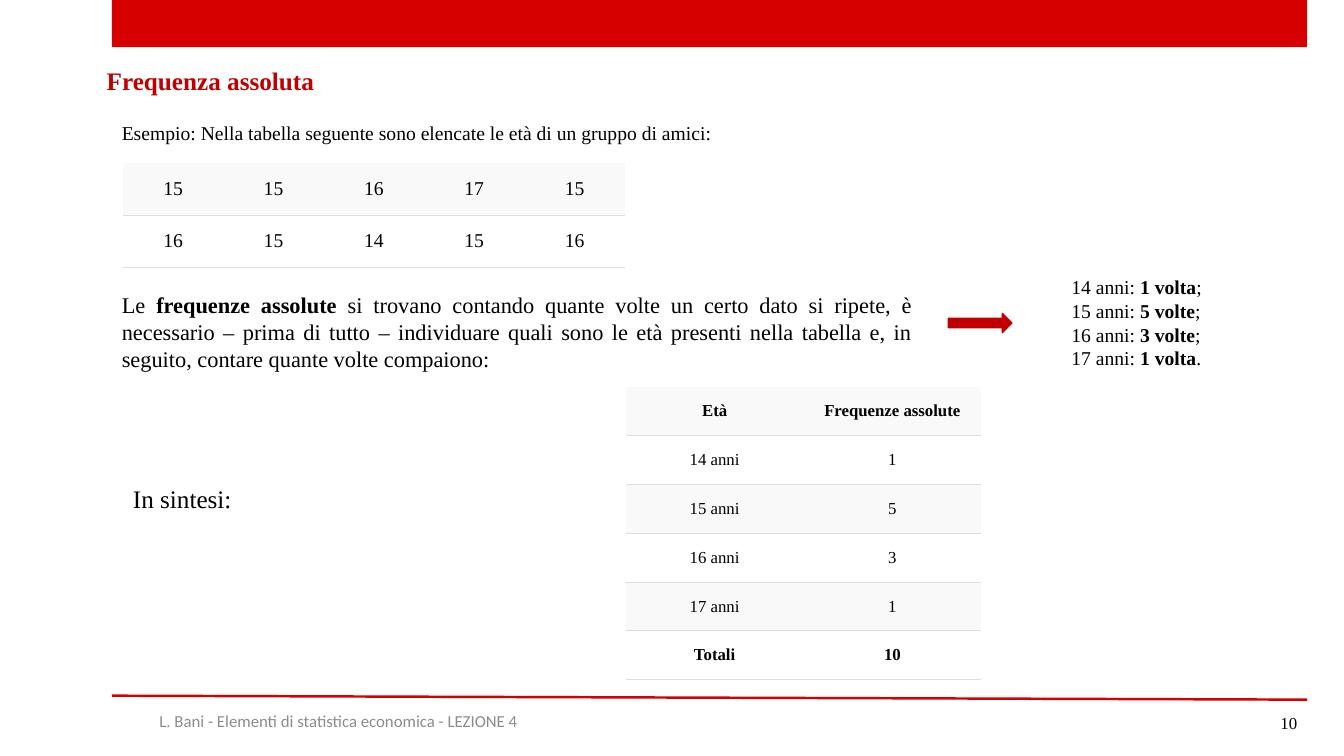
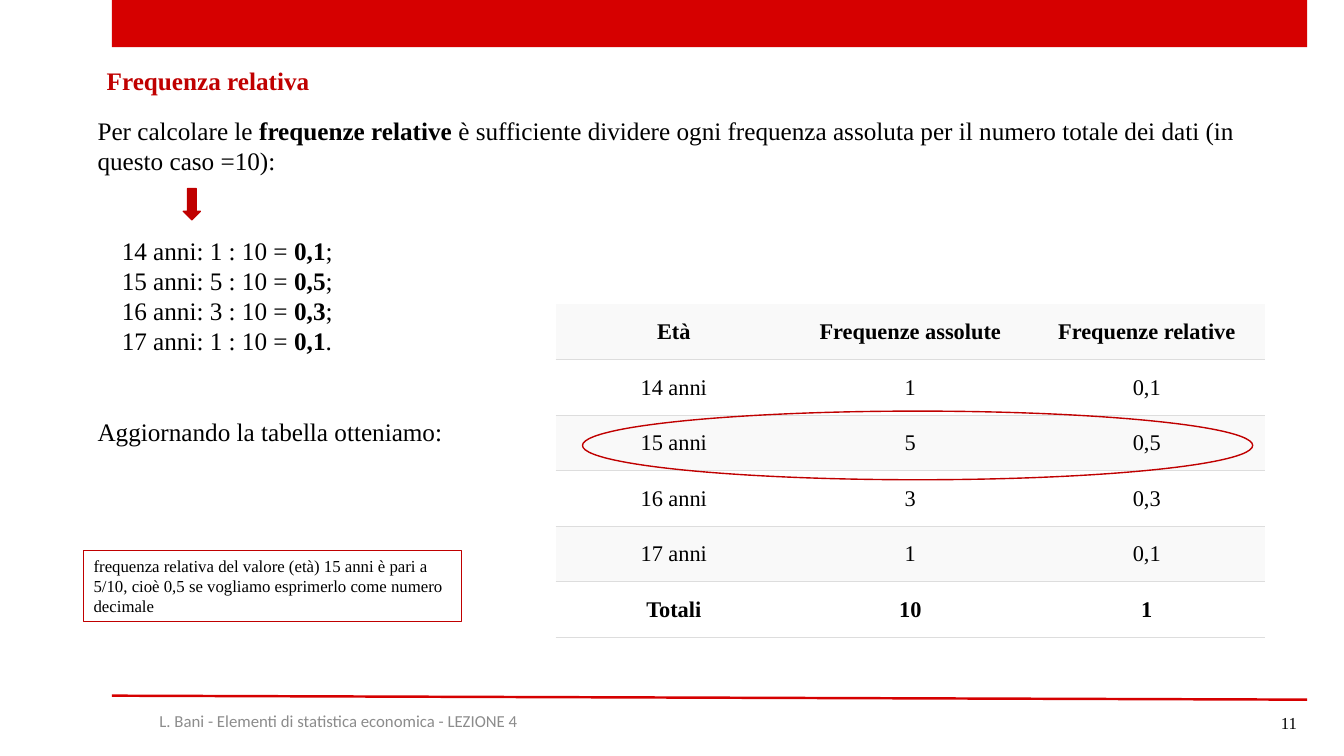
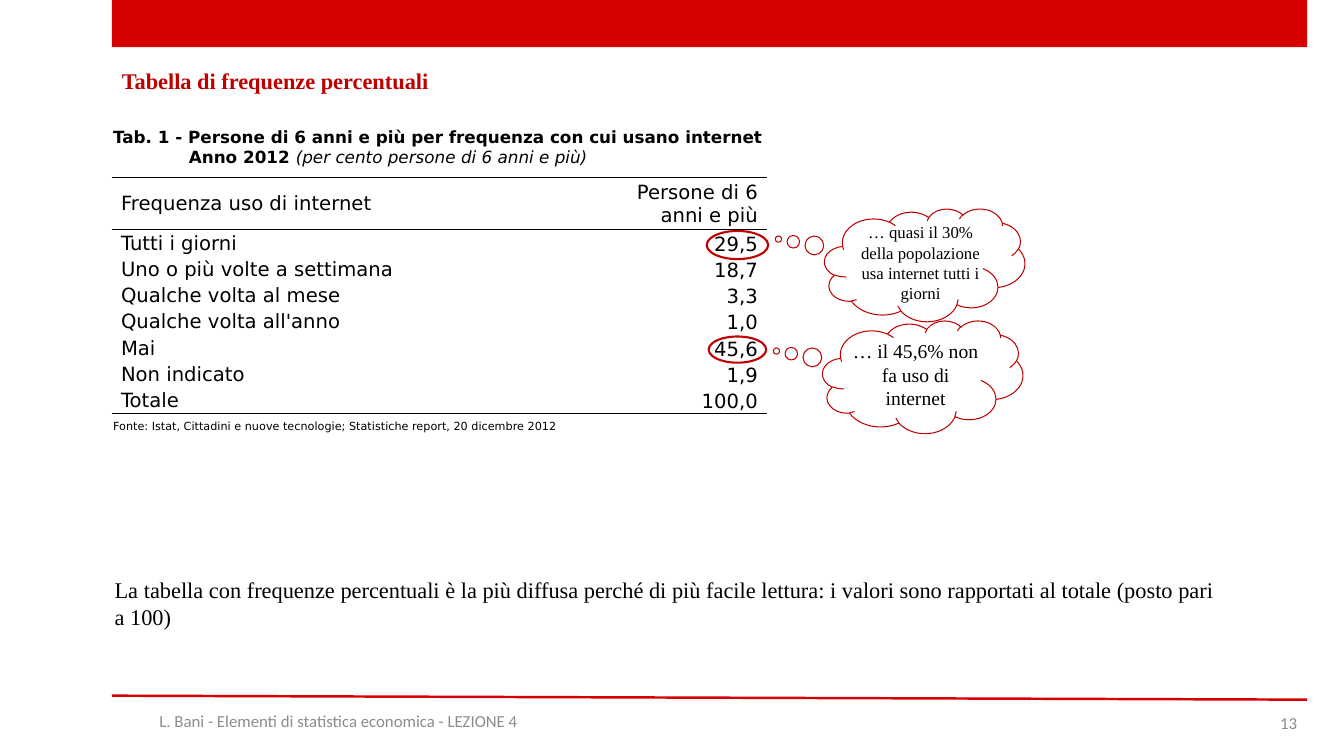
from lxml import etree
from pptx import Presentation
from pptx.dml.color import RGBColor
from pptx.enum import shapes, text
from pptx.oxml.ns import qn
from pptx.util import Cm, Pt

BAND = RGBColor(0xD6, 0x00, 0x00)
RED = RGBColor(0xC0, 0x00, 0x00)
BLACK = RGBColor(0x00, 0x00, 0x00)
GRAY = RGBColor(0x8C, 0x8C, 0x8C)
WHITE = RGBColor(0xFF, 0xFF, 0xFF)
PALE = RGBColor(0xF9, 0xF9, 0xF9)
RULE = RGBColor(0xDD, 0xDD, 0xDD)
SERIF, SANS, PLAIN = "Times New Roman", "DejaVu Sans", "Calibri"
NO_STYLE = "{2D5ABB26-0587-4C30-8999-92F81FD0307C}"

LEFT, CENTER, RIGHT, JUST = (text.PP_ALIGN.LEFT, text.PP_ALIGN.CENTER,
                             text.PP_ALIGN.RIGHT, text.PP_ALIGN.JUSTIFY)
TOP, MID, LOW = (text.MSO_ANCHOR.TOP, text.MSO_ANCHOR.MIDDLE,
                 text.MSO_ANCHOR.BOTTOM)
SHAPE = shapes.MSO_SHAPE


def put(box, words, size=18, font=SERIF, color=BLACK, bold=False, align=LEFT,
        anchor=TOP, inset=(0.25, 0.13, 0.25, 0.13), wrap=True, space=None):
    """Fill a shape or cell: one paragraph a line, *stars* switch bold."""
    frame = box.text_frame
    frame.word_wrap = wrap
    host = box if hasattr(box, "margin_left") else frame
    host.vertical_anchor = anchor
    (host.margin_left, host.margin_top,
     host.margin_right, host.margin_bottom) = [Cm(side) for side in inset]
    for i, line in enumerate(words.split("\n")):
        para = frame.add_paragraph() if i else frame.paragraphs[0]
        para.alignment = align
        para.line_spacing = space
        for j, part in enumerate(line.split("*")):
            if part:
                run = para.add_run()
                run.text = part
                run.font.size, run.font.name = Pt(size), font
                run.font.bold = bold or j % 2 == 1
                run.font.color.rgb = color


def edge(cell, color, width):
    """Draw a rule under a cell."""
    line = etree.Element(qn("a:lnB"), w=str(Pt(width)))
    fill = etree.SubElement(line, qn("a:solidFill"))
    etree.SubElement(fill, qn("a:srgbClr"), val=str(color))
    cell._tc.get_or_add_tcPr().insert(0, line)


deck = Presentation()
deck.slide_width, deck.slide_height = Cm(33.87), Cm(19.05)

# Band, rule, footer, page number and title
HEAD = (2.44, 1.52, 5.8, 1.02)
pages = []
for title, at, style, number, font, color in [
    ("Frequenza assoluta", HEAD, dict(wrap=False), "10", SERIF, BLACK),
    ("Frequenza relativa", HEAD, dict(wrap=False), "11", SERIF, BLACK),
    ("Tabella di frequenze percentuali", (2.82, 1.63, 9.58, 0.71),
     dict(size=16, space=0.9), "13", PLAIN, GRAY),
]:
    page = deck.slides.add_slide(deck.slide_layouts[6]).shapes
    pages.append(page)
    band = page.add_shape(SHAPE.RECTANGLE, Cm(2.82), 0, Cm(30.12), Cm(1.19))
    band.shadow.inherit = False
    band.fill.solid()
    band.fill.fore_color.rgb = BAND
    band.line.fill.background()
    rule = page.add_connector(shapes.MSO_CONNECTOR.STRAIGHT,
                              Cm(2.82), Cm(17.53), Cm(32.94), Cm(17.63))
    rule.line.color.rgb, rule.line.width = BAND, Pt(1.75)
    etree.SubElement(rule._element.spPr, qn("a:effectLst"))
    put(page.add_textbox(Cm(2.82), Cm(17.65), Cm(11.43), Cm(1.02)),
        "L. Bani - Elementi di statistica economica - LEZIONE 4",
        size=12, font=PLAIN, color=GRAY, align=CENTER, anchor=MID)
    put(page.add_textbox(Cm(25.32), Cm(17.7), Cm(7.62), Cm(1.02)), number,
        size=12, font=font, color=color, align=RIGHT, anchor=MID)
    put(page.add_textbox(*map(Cm, at)), title, color=RED, bold=True, **style)
first, second, third = pages

# Body text
for page, at, words, style in [
    (first, (2.82, 2.92, 16, 0.86),
     "Esempio: Nella tabella seguente sono elencate le età di un gruppo "
     "di amici:", dict(size=14)),
    (first, (2.82, 7.21, 20.42, 2.31),
     "Le *frequenze assolute *si trovano contando quante volte un certo dato "
     "si ripete, è necessario – prima di tutto – individuare quali sono le "
     "età presenti nella tabella e, in seguito, contare quante volte "
     "compaiono:", dict(size=16, align=JUST)),
    (first, (27, 6.93, 5.26, 2.39),
     "14 anni: *1 volta*;\n15 anni: *5 volte*;\n"
     "16 anni: *3 volte*;\n17 anni: *1 volta*.",
     dict(size=14, anchor=MID, inset=(0, 0, 0, 0))),
    (first, (3.1, 12.04, 3.02, 1.02), "In sintesi:", dict(wrap=False)),
    (second, (2.21, 2.77, 29.67, 1.8),
     "Per calcolare le *frequenze relative* è sufficiente dividere ogni "
     "frequenza assoluta per il numero totale dei dati (in questo caso "
     "=10):", {}),
    (second, (2.82, 5.79, 6.88, 3.33),
     "14 anni: 1 : 10 = *0,1*;\n15 anni: 5 : 10 = *0,5*;\n"
     "16 anni: 3 : 10 = *0,3*;\n17 anni: 1 : 10 = *0,1*.", {}),
    (second, (2.21, 10.36, 9.3, 1.02), "Aggiornando la tabella otteniamo:",
     dict(wrap=False)),
    (third, (2.64, 14.38, 28.22, 1.63),
     "La tabella con frequenze percentuali è la più diffusa perché di più "
     "facile lettura: i valori sono rapportati al totale (posto pari a 100)",
     dict(size=16, align=JUST)),
]:
    put(page.add_textbox(*map(Cm, at)), words, **style)

# Striped tables
ages = [["15", "15", "16", "17", "15"], ["16", "15", "14", "15", "16"]]
freqs = [["*Età*", "*Frequenze assolute*", "*Frequenze relative*"],
         ["14 anni", "1", "0,1"], ["15 anni", "5", "0,5"],
         ["16 anni", "3", "0,3"], ["17 anni", "1", "0,1"],
         ["*Totali*", "*10*", "*1*"]]
for page, left, top, wide, high, size, rows in [
    (first, 3.1, 4.11, 2.53, 1.31, 14, ages),
    (first, 15.77, 9.75, 4.48, 1.22, 12, [row[:2] for row in freqs]),
    (second, 14, 7.67, 5.96, 1.39, 16, freqs),
]:
    cols = len(rows[0])
    table = page.add_table(len(rows), cols, Cm(left), Cm(top),
                           Cm(wide * cols), Cm(high * len(rows))).table
    table._tbl.tblPr[0].text = NO_STYLE
    for i, row in enumerate(rows):
        for j, words in enumerate(row):
            cell = table.cell(i, j)
            cell.fill.solid()
            cell.fill.fore_color.rgb = WHITE if i % 2 else PALE
            edge(cell, RULE, 0.75)
            put(cell, words, size=size, align=CENTER, anchor=MID,
                inset=[0.36] * 4)

# Internet use table
uses = [("Frequenza uso di internet", "Persone di 6 anni e più"),
        ("Tutti i giorni", "29,5"), ("Uno o più volte a settimana", "18,7"),
        ("Qualche volta al mese", "3,3"), ("Qualche volta all'anno", "1,0"),
        ("Mai", "45,6"), ("Non indicato", "1,9"), ("Totale", "100,0")]
highs = [1.27, 1.32] + [0.66] * 7 + [0.51]
table = third.add_table(len(highs), 2, Cm(2.82), Cm(3.2),
                        Cm(16.51), Cm(sum(highs))).table
table._tbl.tblPr[0].text = NO_STYLE
table.columns[0].width, table.columns[1].width = Cm(12.98), Cm(3.53)
for i, high in enumerate(highs):
    table.rows[i].height = Cm(high)
    for cell in table.rows[i].cells:
        cell.fill.background()
        if i in (0, 1, 8):
            edge(cell, BLACK, 0.5)
for i, (label, value) in enumerate(uses, 1):
    put(table.cell(i, 0), label, size=14, font=SANS, anchor=MID,
        inset=(0.23, 0.03, 0.03, 0))
    put(table.cell(i, 1), value, size=14, font=SANS, align=RIGHT,
        anchor=MID if i == 1 else LOW, inset=(0.03, 0.03, 0.23, 0))
for i, words, size, anchor in [
    (0, "*Tab. 1 - Persone di 6 anni e più per frequenza con cui usano "
     "internet*\n*Anno 2012 *(per cento persone di 6 anni e più)", 12, TOP),
    (9, "Fonte: Istat, Cittadini e nuove tecnologie; Statistiche report, "
     "20 dicembre 2012", 8, LOW),
]:
    table.cell(i, 0).merge(table.cell(i, 1))
    put(table.cell(i, 0), words, size=size, font=SANS, anchor=anchor,
        inset=(0.03, 0.03, 0.03, 0))
year = table.cell(0, 0).text_frame.paragraphs[1]
year.runs[1].font.italic = True
year._p.get_or_add_pPr().set("marL", str(Cm(1.91)))

# Arrows, rings, note and clouds
for page, kind, at, solid, width, words, style in [
    (first, SHAPE.RIGHT_ARROW, (23.9, 7.9, 1.6, 0.48), True, 1, "", {}),
    (second, SHAPE.DOWN_ARROW, (4.62, 4.75, 0.43, 0.79), True, 1, "", {}),
    (second, SHAPE.OVAL, (14.68, 10.36, 16.89, 1.73), False, 1, "", {}),
    (second, SHAPE.RECTANGLE, (2.11, 13.87, 9.53, 1.8), False, 0.75,
     "frequenza relativa del valore (età) 15 anni è pari a 5/10, cioè 0,5 se "
     "vogliamo esprimerlo come numero decimale", dict(size=12, anchor=MID)),
    (third, SHAPE.OVAL, (17.86, 8.48, 1.45, 0.66), False, 1.5, "", {}),
    (third, SHAPE.OVAL, (17.81, 5.82, 1.55, 0.71), False, 1.5, "", {}),
    (third, SHAPE.CLOUD_CALLOUT, (20.78, 5.26, 5.05, 2.84), False, 0.75,
     "… quasi il 30% della popolazione usa internet tutti i giorni",
     dict(size=12, align=CENTER, anchor=MID, inset=(0.15, 0, 0, 0))),
    (third, SHAPE.CLOUD_CALLOUT, (20.73, 8.08, 5.05, 2.84), False, 0.75,
     "… il 45,6% non fa uso di internet",
     dict(size=14, align=CENTER, anchor=MID, inset=(0.05, 0, 0.05, 0))),
]:
    mark = page.add_shape(kind, *map(Cm, at))
    mark.shadow.inherit = False
    mark.line.color.rgb, mark.line.width = RED, Pt(width)
    if solid:
        mark.fill.solid()
        mark.fill.fore_color.rgb = RED
    else:
        mark.fill.background()
    if kind == SHAPE.CLOUD_CALLOUT:
        mark.adjustments[0], mark.adjustments[1] = -0.73, -0.23
    if words:
        put(mark, words, **style)

deck.save("out.pptx")
